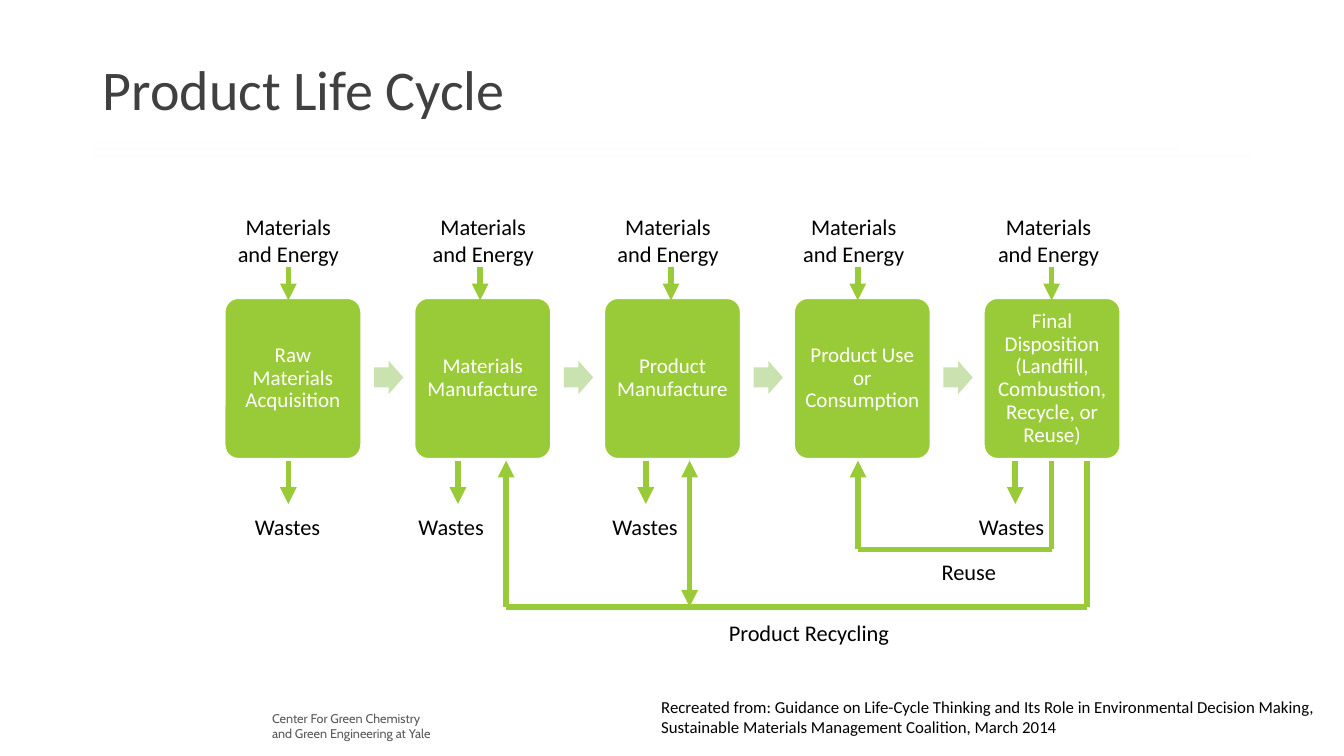
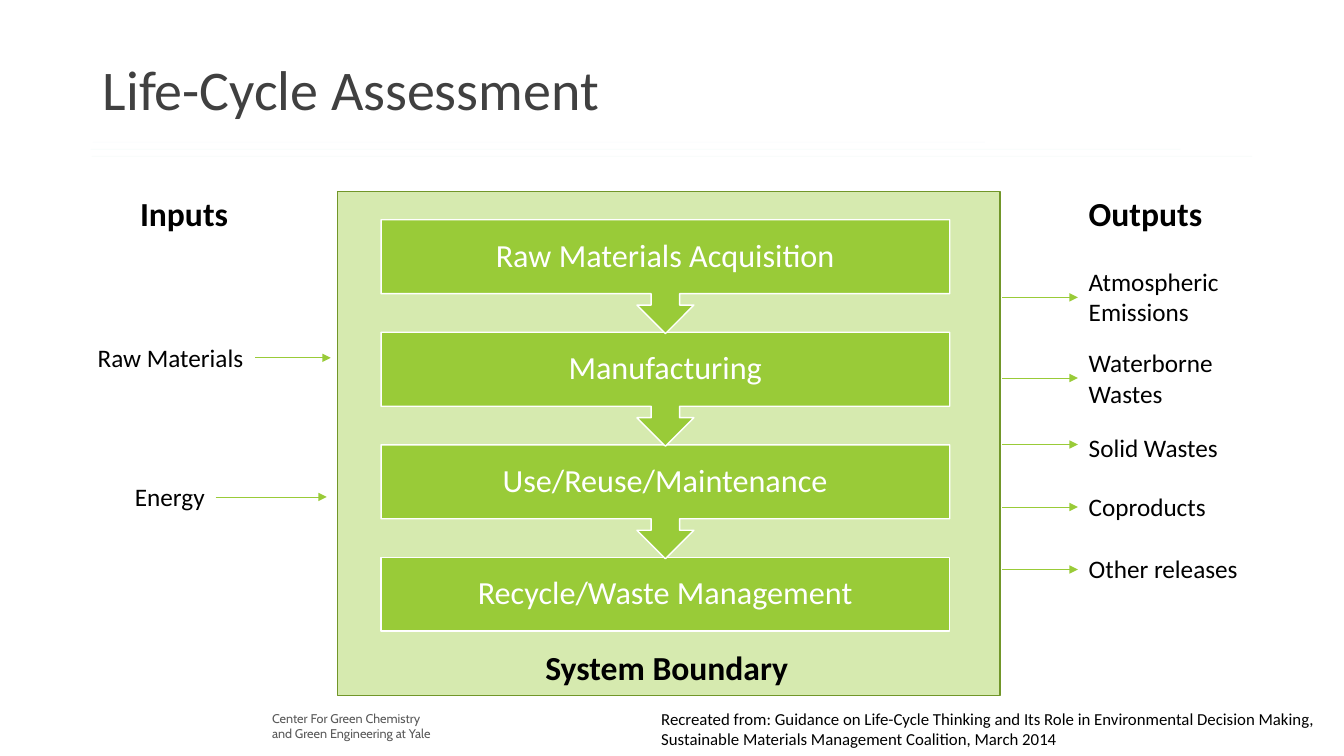
import collections

import lxml.etree
import pptx
import pptx.dml.color
import pptx.enum.shapes
import pptx.enum.text
import pptx.oxml.ns
import pptx.util

RGB = pptx.dml.color.RGBColor
SHAPE = pptx.enum.shapes.MSO_SHAPE
ALIGN = pptx.enum.text.PP_ALIGN
ANCHOR = pptx.enum.text.MSO_ANCHOR
qn = pptx.oxml.ns.qn

EMU_PER_PX = 9144
GREEN = RGB(0x99, 0xCB, 0x38)
SOFT_GREEN = RGB(0xCA, 0xE2, 0xAF)
PANEL_GREEN = RGB(0xD6, 0xEA, 0xAF)
PANEL_EDGE = RGB(0x71, 0x96, 0x29)
WHITE = RGB(0xFF, 0xFF, 0xFF)
BLACK = RGB(0, 0, 0)
TITLE_GREY = RGB(0x40, 0x40, 0x40)
FOOTER_GREY = RGB(0x59, 0x59, 0x59)
BODY_FONT = "Calibri"
FOOTER_FONT = "Cabin"
RULE_OPACITY = 3

Box = collections.namedtuple("Box", "left top width height")
Rule = collections.namedtuple("Rule", "left right y color")
Stage = collections.namedtuple("Stage", "name input_dx arrow_dx waste_arrow_dx waste_dx")
Flow = collections.namedtuple("Flow", "text box arrow_left arrow_right arrow_y wrap")

TITLE_RULES = [
    Rule(92, 977, 141, RGB(0x4E, 0xB3, 0xCF)),
    Rule(90, 1171, 148, RGB(0x44, 0xC1, 0xA3)),
    Rule(91, 1242, 155, RGB(0x37, 0xA7, 0x6F)),
]
CREDIT = (
    "Recreated from: Guidance on Life-Cycle Thinking and Its Role in Environmental "
    "Decision Making, Sustainable Materials Management Coalition, March 2014"
)
# Offsets run from the left edge of each stage.
STAGES = [
    Stage("Raw Materials Acquisition", -1, 63, 63, 20),
    Stage("Materials Manufacture", 4, 65, 43, -6),
    Stage("Product Manufacture", -1, 66, 41, -2),
    Stage("Product Use or Consumption", -5, 63, None, None),
    Stage("Final Disposition (Landfill, Combustion, Recycle, or Reuse)", 0, 67, 31, -15),
]
PHASES = [
    "Raw Materials Acquisition",
    "Manufacturing",
    "Use/Reuse/Maintenance",
    "Recycle/Waste Management",
]
# Places run from the top left corner of the system boundary.
FLOWS = [
    Flow("Raw Materials", Box(-248, 145, 166, 40), -82, -7, 165, False),
    Flow("Energy", Box(-211, 283, 90, 40), -121, -11, 303, False),
    Flow("Atmospheric Emissions", Box(735, 69, 207, 71), 659, 734, 105, True),
    Flow("Waterborne Wastes", Box(735, 150, 207, 71), 659, 734, 185, True),
    Flow("Solid Wastes", Box(735, 234, 207, 40), 659, 734, 251, True),
    Flow("Coproducts", Box(735, 293, 207, 40), 659, 734, 313, True),
    Flow("Other releases", Box(735, 354, 207, 40), 659, 734, 375, True),
]


def px(length):
    return pptx.util.Emu(round(length * EMU_PER_PX))


def write(frame, text, size, color=BLACK, font=BODY_FONT, bold=False,
          align=ALIGN.LEFT, spacing=1.0):
    frame.text = text
    for para in frame.paragraphs:
        para.alignment = align
        para.line_spacing = spacing
        para.font.size = pptx.util.Pt(size)
        para.font.name = font
        para.font.bold = bold
        para.font.color.rgb = color


def add_label(page, box, text, size, wrap=True, anchor=ANCHOR.TOP, **style):
    frame = page.shapes.add_textbox(*map(px, box)).text_frame
    frame.word_wrap = wrap
    frame.vertical_anchor = anchor
    write(frame, text, size, **style)


def add_block(page, kind, box, fill, edge=None, text="", size=15, margin=0):
    """Draw a filled shape, with centred white text if there is any."""
    block = page.shapes.add_shape(kind, *map(px, box))
    block.shadow.inherit = False
    block.fill.solid()
    block.fill.fore_color.rgb = fill
    if edge is None:
        block.line.fill.background()
    else:
        block.line.color.rgb = edge
        block.line.width = pptx.util.Pt(1)
    if text:
        frame = block.text_frame
        frame.word_wrap = True
        frame.vertical_anchor = ANCHOR.MIDDLE
        frame.margin_left = frame.margin_right = px(margin)
        frame.margin_top = frame.margin_bottom = px(margin)
        write(frame, text, size, WHITE, align=ALIGN.CENTER, spacing=0.9)
    return block


def add_line(page, start, end, width, color=GREEN, arrows=(), opacity=100):
    """Draw a line; arrows may name headEnd (start) and tailEnd (end)."""
    line = page.shapes.add_connector(
        pptx.enum.shapes.MSO_CONNECTOR.STRAIGHT, *map(px, start + end))
    line.line.color.rgb = color
    line.line.width = pptx.util.Pt(width)
    properties = line.element.spPr
    outline = properties.find(qn("a:ln"))
    if opacity < 100:
        tint = next(outline.iter(qn("a:srgbClr")))
        lxml.etree.SubElement(tint, qn("a:alpha"), val=str(opacity * 1000))
    for arrow in arrows:
        lxml.etree.SubElement(outline, qn("a:" + arrow), type="triangle")
    lxml.etree.SubElement(properties, qn("a:effectLst"))


def add_page(deck, title, credit_top):
    """Add a blank page with the shared title, rules, footer and credit."""
    page = deck.slides.add_slide(deck.slide_layouts[6])
    add_label(page, Box(260, 700, 186, 40),
              "Center For Green Chemistry\nand Green Engineering at Yale",
              9, color=FOOTER_GREY, font=FOOTER_FONT)
    for rule in TITLE_RULES:
        add_line(page, (rule.left, rule.y), (rule.right, rule.y), 0.5,
                 rule.color, opacity=RULE_OPACITY)
    add_label(page, Box(92, 19, 1150, 145), title, 40, anchor=ANCHOR.MIDDLE,
              color=TITLE_GREY, spacing=0.9)
    add_label(page, Box(646, credit_top, 687, 50), CREDIT, 12)
    return page


def add_stage(page, stage, box):
    """Draw one stage with its input above and its wastes below."""
    bottom = box.top + box.height
    block = add_block(page, SHAPE.ROUNDED_RECTANGLE, box, GREEN, WHITE, stage.name, margin=6)
    block.adjustments[0] = 0.1
    add_label(page, Box(box.left + stage.input_dx, box.top - 89, 128, 64),
              "Materials and Energy", 16, align=ALIGN.CENTER)
    arrow_x = box.left + stage.arrow_dx
    add_line(page, (arrow_x, box.top - 31), (arrow_x, box.top + 2), 4, arrows=["tailEnd"])
    if stage.waste_dx is not None:
        waste_x = box.left + stage.waste_arrow_dx
        add_line(page, (waste_x, bottom + 2), (waste_x, bottom + 45), 4, arrows=["tailEnd"])
        add_label(page, Box(box.left + stage.waste_dx, bottom + 49, 86, 37),
                  "Wastes", 16, wrap=False)


def add_return_loop(page, start_x, end_x, top, bottom):
    """Draw a line down, back to the left and up into an earlier stage."""
    corners = [(start_x, top), (start_x, bottom), (end_x, bottom), (end_x, top)]
    for start, end in zip(corners, corners[1:]):
        add_line(page, start, end, 4, arrows=["tailEnd"] if end == corners[-1] else [])


def add_life_cycle(page, box):
    stage_width, stage_height = 135, 159
    stage_top = box.top + 89
    pitch = (box.width - stage_width) / (len(STAGES) - 1)
    for index, stage in enumerate(STAGES):
        left = box.left + index * pitch
        add_stage(page, stage, Box(left, stage_top, stage_width, stage_height))
        if index < len(STAGES) - 1:
            arrow = add_block(page, SHAPE.RIGHT_ARROW,
                              Box(left + 148, stage_top + 62, 29, 33), SOFT_GREEN)
            arrow.adjustments[0] = 0.6
    loop_top = stage_top + stage_height + 2
    recycling_y = box.top + 395
    add_return_loop(page, box.left + 855, box.left + 279, loop_top, recycling_y)
    add_return_loop(page, box.left + 820, box.left + 628, loop_top, box.top + 338)
    manufacture_x = box.left + 461
    add_line(page, (manufacture_x, loop_top), (manufacture_x, recycling_y), 4,
             arrows=["headEnd", "tailEnd"])
    add_label(page, Box(box.left + 701, box.top + 342, 75, 37), "Reuse", 16, wrap=False)
    add_label(page, Box(box.left + 490, box.top + 402, 181, 37),
              "Product Recycling", 16, wrap=False)


def add_system_boundary(page, box):
    add_block(page, SHAPE.RECTANGLE, box, PANEL_GREEN, PANEL_EDGE)
    bar_height, callout_height = 73, 113
    first_top, last_top = box.top + 28, box.top + 363
    pitch = (last_top - first_top) / (len(PHASES) - 1)
    last = len(PHASES) - 1
    for index in reversed(range(len(PHASES))):
        kind, height = ((SHAPE.RECTANGLE, bar_height) if index == last
                        else (SHAPE.DOWN_ARROW_CALLOUT, callout_height))
        add_block(page, kind, Box(box.left + 43, first_top + index * pitch, 564, height),
                  GREEN, WHITE, PHASES[index], 23)
    add_label(page, Box(box.left + 196, box.top + 447, 264, 50),
              "System Boundary", 24, wrap=False, bold=True)


def add_flows(page, box):
    """Place the inputs and outputs on either side of the boundary box."""
    for text, left, width in [("Inputs", -206, 109), ("Outputs", 735, 134)]:
        add_label(page, Box(box.left + left, box.top - 4, width, 50),
                  text, 24, wrap=False, bold=True)
    for flow in FLOWS:
        place = flow.box._replace(left=box.left + flow.box.left, top=box.top + flow.box.top)
        add_label(page, place, flow.text, 18, wrap=flow.wrap)
        y = box.top + flow.arrow_y
        add_line(page, (box.left + flow.arrow_left, y), (box.left + flow.arrow_right, y),
                 0.5, arrows=["tailEnd"])


def main():
    deck = pptx.Presentation()
    deck.slide_width, deck.slide_height = px(1333), px(750)

    page = add_page(deck, "Product Life Cycle", 686)
    add_life_cycle(page, Box(223, 207, 888, 439))

    page = add_page(deck, "Life-Cycle Assessment", 698)
    boundary = Box(335, 190, 657, 500)
    add_system_boundary(page, boundary)
    add_flows(page, boundary)

    deck.save("out.pptx")


if __name__ == "__main__":
    main()
